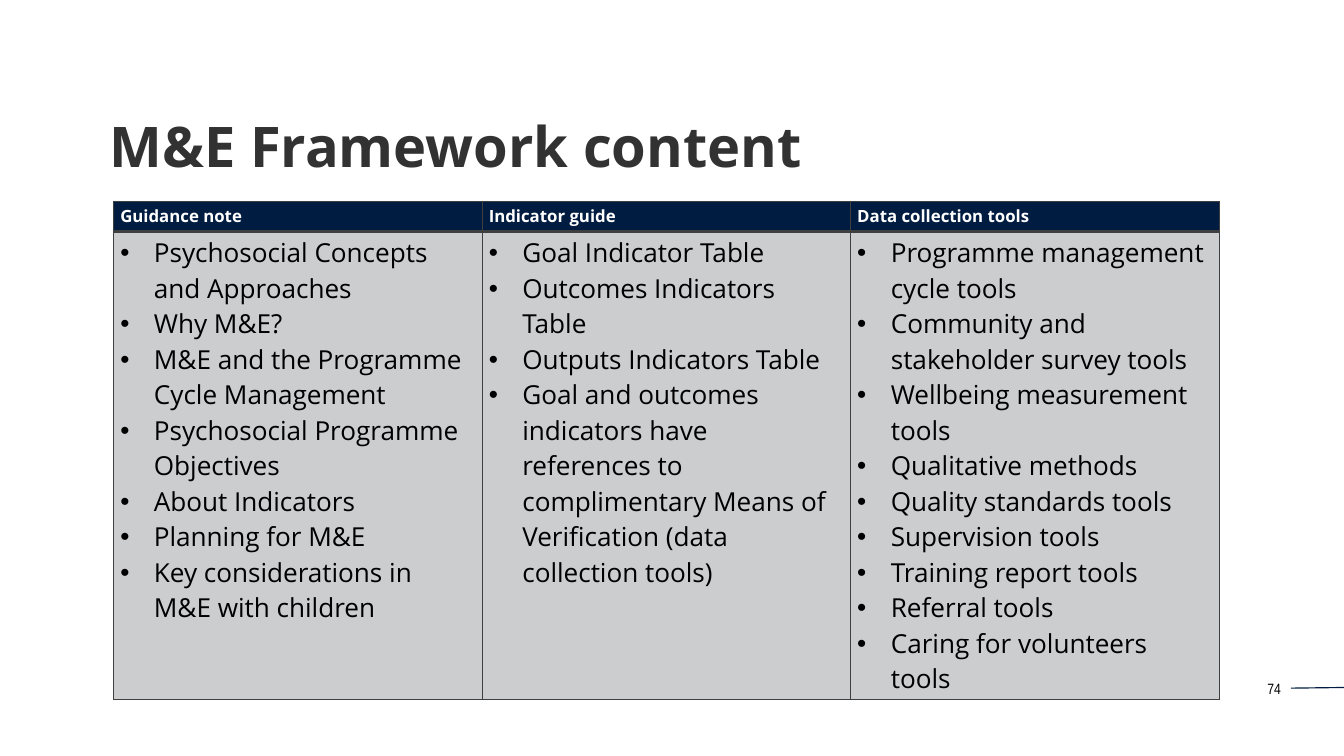
import pptx
import pptx.util
import pptx.dml.color
import pptx.enum.shapes
import pptx.enum.text
import pptx.oxml.ns
from dataclasses import dataclass
from lxml import etree

Pt = pptx.util.Pt
Align = pptx.enum.text.PP_ALIGN
Anchor = pptx.enum.text.MSO_ANCHOR

# Content
TITLE = "M&E Framework content"
PAGE_NUMBER = "74"
COLUMNS = {
    "Guidance note": [
        "Psychosocial Concepts and Approaches",
        "Why M&E?",
        "M&E and the Programme Cycle Management",
        "Psychosocial Programme Objectives",
        "About Indicators",
        "Planning for M&E",
        "Key considerations in M&E with children",
    ],
    "Indicator guide": [
        "Goal Indicator Table",
        "Outcomes Indicators Table",
        "Outputs Indicators Table",
        "Goal and outcomes indicators have references to complimentary "
        "Means of Verification (data collection tools)",
    ],
    "Data collection tools": [
        "Programme management cycle tools",
        "Community and stakeholder survey tools",
        "Wellbeing measurement tools",
        "Qualitative methods",
        "Quality standards tools",
        "Supervision tools",
        "Training report tools",
        "Referral tools",
        "Caring for volunteers tools",
    ],
}


@dataclass(frozen=True)
class Theme:
    font: str = "Open Sans"
    number_font: str = "Arial Narrow"
    title_size: int = 60
    body_size: int = 28
    header_size: int = 18
    number_size: int = 16
    navy: str = "001D41"
    grey: str = "CCCDCF"
    border: str = "3F3F3F"
    title: str = "323232"
    black: str = "000000"
    white: str = "FFFFFF"


THEME = Theme()
BULLET_INDENT = 36
ROW_HEIGHTS = (32, 501.5)
# Right margins of the body cells, which set where the lines wrap
BODY_MARGINS = (7.2, 12, 7.2)


def rgb(value):
    return pptx.dml.color.RGBColor.from_string(value)


def add_span(para, text, size, color, font=THEME.font, bold=False):
    span = para.add_run()
    span.text = text
    span.font.name = font
    span.font.size = Pt(size)
    span.font.bold = bold
    span.font.color.rgb = rgb(color)


def add_box(page, left, top, width, height, anchor):
    box = page.shapes.add_textbox(Pt(left), Pt(top), Pt(width), Pt(height))
    box.text_frame.word_wrap = True
    box.text_frame.vertical_anchor = anchor
    return box.text_frame


def add_child(parent, tag, **attributes):
    child = etree.SubElement(parent, pptx.oxml.ns.qn(tag))
    for name, value in attributes.items():
        child.set(name, str(value))
    return child


def style_cell(cell, fill, top_width, bottom_width):
    properties = cell._tc.get_or_add_tcPr()
    widths = {"L": 1, "R": 1, "T": top_width, "B": bottom_width}
    for side, width in widths.items():
        line = add_child(properties, f"a:ln{side}", w=int(Pt(width)))
        solid = add_child(line, "a:solidFill")
        add_child(solid, "a:srgbClr", val=THEME.border)
    cell.fill.solid()
    cell.fill.fore_color.rgb = rgb(fill)


def add_bullet(para):
    properties = para._p.get_or_add_pPr()
    properties.set("marL", str(int(Pt(BULLET_INDENT))))
    properties.set("indent", str(int(Pt(-BULLET_INDENT))))
    add_child(properties, "a:buFont", typeface="Arial")
    add_child(properties, "a:buChar", char="•")


def add_title(page):
    frame = add_box(page, 110.2, 124.6, 1219.7, 84.2, Anchor.TOP)
    para = frame.paragraphs[0]
    para.line_spacing = 0.9
    add_span(para, TITLE, THEME.title_size, THEME.title, bold=True)


def add_content_table(page):
    width = 1184.4
    table = page.shapes.add_table(
        2, len(COLUMNS), Pt(121.7), Pt(216), Pt(width), Pt(sum(ROW_HEIGHTS))
    ).table
    table.horz_banding = False
    for row, height in zip(table.rows, ROW_HEIGHTS):
        row.height = Pt(height)
    for index, (heading, items) in enumerate(COLUMNS.items()):
        table.columns[index].width = Pt(width / len(COLUMNS))
        header, body = table.cell(0, index), table.cell(1, index)
        style_cell(header, THEME.navy, 1, 3)
        style_cell(body, THEME.grey, 3, 1)
        body.margin_right = Pt(BODY_MARGINS[index])
        add_span(header.text_frame.paragraphs[0], heading,
                 THEME.header_size, THEME.white, bold=True)
        frame = body.text_frame
        for number, item in enumerate(items):
            para = frame.add_paragraph() if number else frame.paragraphs[0]
            add_bullet(para)
            add_span(para, item, THEME.body_size, THEME.black)


def add_footer(page):
    frame = add_box(page, 1327.7, 724.3, 51.8, 26.6, Anchor.MIDDLE)
    para = frame.paragraphs[0]
    para.alignment = Align.RIGHT
    add_span(para, PAGE_NUMBER, THEME.number_size, THEME.black,
             font=THEME.number_font)
    rule = page.shapes.add_connector(
        pptx.enum.shapes.MSO_CONNECTOR.STRAIGHT,
        Pt(1383.1), Pt(737.3), Pt(1440), Pt(736.6))
    rule.line.color.rgb = rgb(THEME.navy)
    rule.line.width = Pt(1.25)
    add_child(rule._element.spPr, "a:effectLst")


def main():
    deck = pptx.Presentation()
    deck.slide_width, deck.slide_height = Pt(1440), Pt(810)
    page = deck.slides.add_slide(deck.slide_layouts[6])
    add_footer(page)
    add_title(page)
    add_content_table(page)
    deck.save("out.pptx")


if __name__ == "__main__":
    main()
